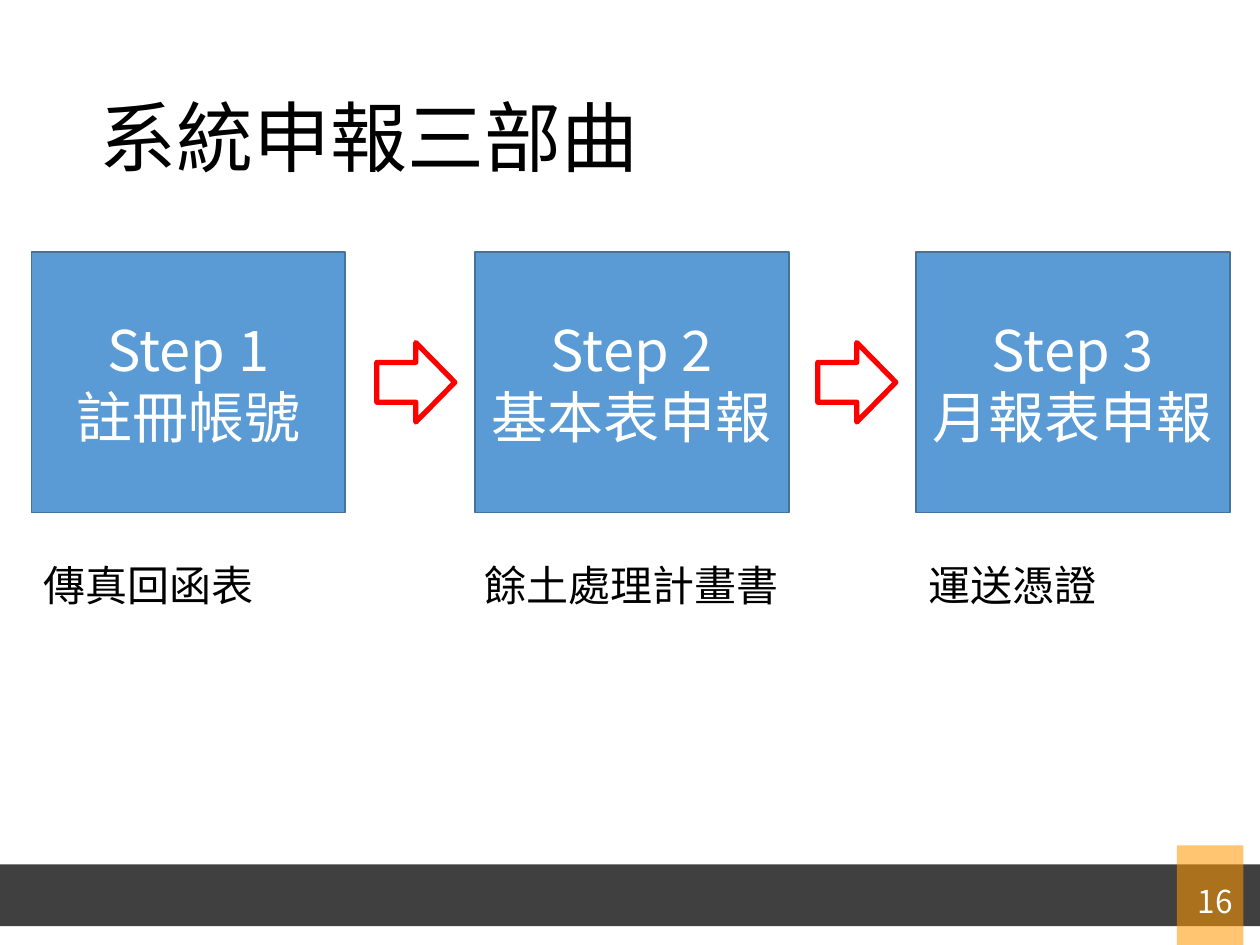
from lxml import etree
from pptx import Presentation
from pptx import util as u
from pptx.dml.color import RGBColor
from pptx.enum import shapes, text
from pptx.oxml.ns import qn

BLACK = RGBColor(0x00, 0x00, 0x00)
WHITE = RGBColor(0xFF, 0xFF, 0xFF)
DARK = RGBColor(0x40, 0x40, 0x40)
ORANGE = RGBColor(0xFF, 0x99, 0x00)
BLUE = RGBColor(0x5B, 0x9B, 0xD5)
NAVY = RGBColor(0x43, 0x73, 0x9E)
RED = RGBColor(0xFF, 0x00, 0x00)


class Deck:
    """Holds the style and the current slide; all lengths are in points."""

    font = "Noto Sans CJK JP"

    def __init__(self, s):
        self.s = s

    def fill_text(self, sp, lines, size, color, align=text.PP_ALIGN.LEFT,
                  anchor=text.MSO_ANCHOR.MIDDLE, spacing=None):
        tf = sp.text_frame
        frame_format = {"word_wrap": True, "vertical_anchor": anchor,
                        "auto_size": text.MSO_AUTO_SIZE.NONE}
        for name, value in frame_format.items():
            setattr(tf, name, value)
        for i, line in enumerate(lines):
            p = tf.add_paragraph() if i else tf.paragraphs[0]
            p.alignment = align
            if spacing:
                p.line_spacing = spacing
            r = p.add_run()
            r.text = line
            for name, value in {"name": self.font, "size": u.Pt(size)}.items():
                setattr(r.font, name, value)
            r.font.color.rgb = color
            # East Asian glyphs take their own font entry
            ea = etree.SubElement(r.font._element, qn("a:ea"))
            ea.set("typeface", self.font)

    def title(self, line, x, y, w, h):
        sp = self.s.shapes.title
        place = {"left": x, "top": y, "width": w, "height": h}
        for name, value in place.items():
            setattr(sp, name, u.Pt(value))
        self.fill_text(sp, [line], 44, BLACK, spacing=0.9)

    def shape(self, kind, x, y, w, h, fill=None, line=None, weight=1, alpha=None):
        sp = self.s.shapes.add_shape(kind, u.Pt(x), u.Pt(y), u.Pt(w), u.Pt(h))
        sp.shadow.inherit = False
        if fill is None:
            sp.fill.background()
        else:
            sp.fill.solid()
            sp.fill.fore_color.rgb = fill
        if line is None:
            sp.line.fill.background()
        else:
            sp.line.color.rgb = line
            sp.line.width = u.Pt(weight)
        if alpha is not None:
            color = sp._element.spPr.find(".//" + qn("a:srgbClr"))
            etree.SubElement(color, qn("a:alpha")).set("val", str(alpha * 1000))
        return sp

    def label(self, line, x, y, w, h, size, color, **style):
        sp = self.s.shapes.add_textbox(u.Pt(x), u.Pt(y), u.Pt(w), u.Pt(h))
        self.fill_text(sp, [line], size, color, **style)


def main():
    prs = Presentation()
    prs.slide_width, prs.slide_height = u.Pt(720), u.Pt(540)
    d = Deck(prs.slides.add_slide(prs.slide_layouts[5]))
    rect = shapes.MSO_SHAPE.RECTANGLE

    # Footer band, page tab and page number
    d.shape(rect, 0, 493.9, 720, 35.3, DARK)
    d.shape(rect, 672.5, 483.1, 38, 58.3, ORANGE, alpha=56)
    d.label("16", 655.2, 500.4, 56.2, 28.8, 18, WHITE, align=text.PP_ALIGN.RIGHT)

    d.title("系統申報三部曲", 49.7, 28.8, 620.6, 104.4)

    # Steps: box left, name, note left, note width, note
    steps = [
        (18, "註冊帳號", 18, 179.3, "傳真回函表"),
        (271.4, "基本表申報", 270, 188.6, "餘土處理計畫書"),
        (523.4, "月報表申報", 523.4, 179.3, "運送憑證"),
    ]
    for n, (x, name, note_x, note_w, note) in enumerate(steps, 1):
        sp = d.shape(rect, x, 144, 179.3, 149, BLUE, NAVY)
        d.fill_text(sp, [f"Step {n}", name], 32, WHITE, align=text.PP_ALIGN.CENTER)
        d.label(note, note_x, 316.1, note_w, 36, 24, BLACK,
                anchor=text.MSO_ANCHOR.TOP)

    # Arrows between the steps
    for x, *_ in steps[1:]:
        d.shape(shapes.MSO_SHAPE.RIGHT_ARROW, x - 56.1, 195.8, 44.6, 45.4,
                line=RED, weight=3)

    prs.save("out.pptx")


if __name__ == "__main__":
    main()
